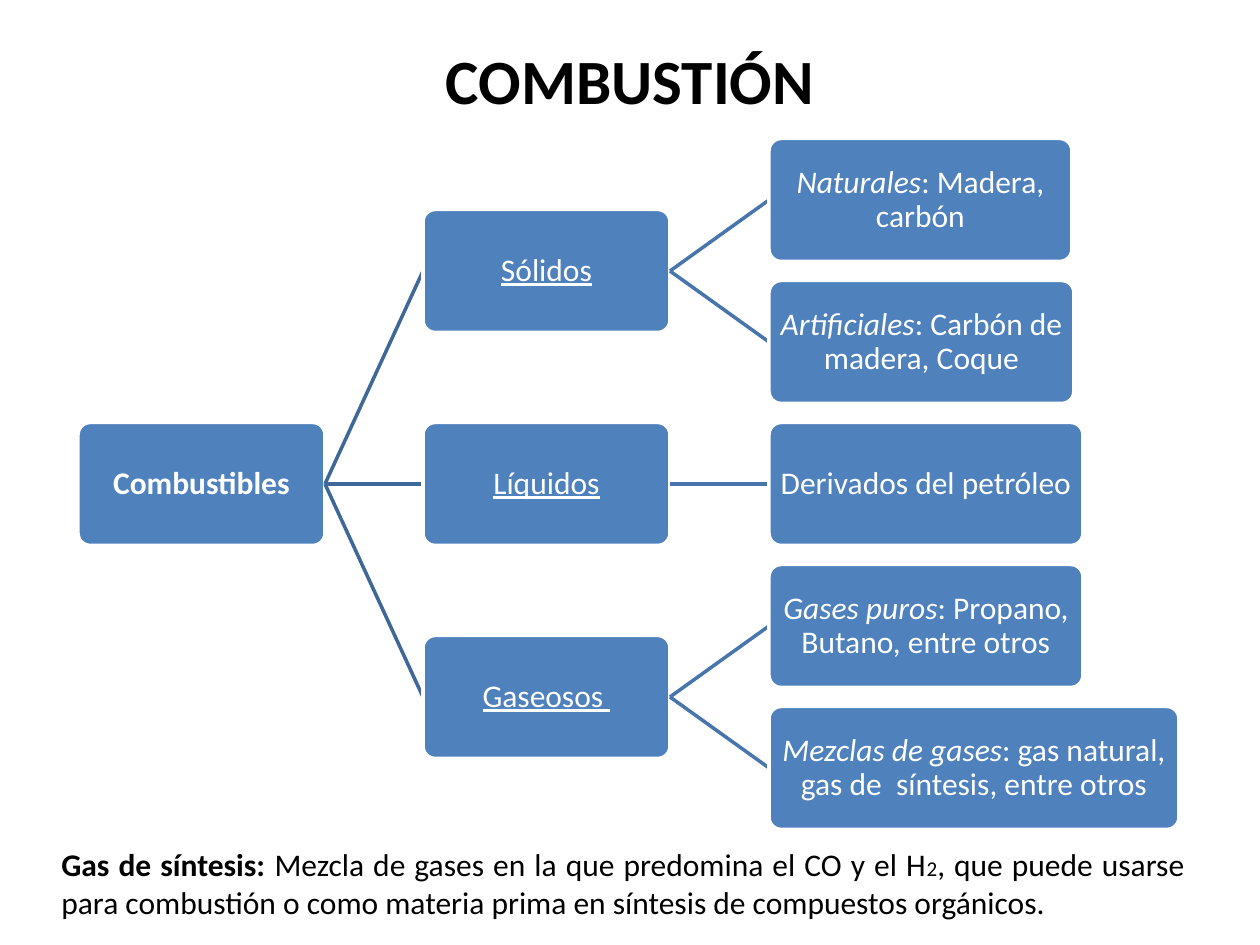
from dataclasses import dataclass

from lxml import etree
from pptx import Presentation
from pptx.dml.color import RGBColor
from pptx.enum.shapes import MSO_CONNECTOR, MSO_SHAPE
from pptx.enum.text import MSO_ANCHOR, PP_ALIGN
from pptx.oxml.ns import qn
from pptx.util import Pt

STRAIGHT = MSO_CONNECTOR.STRAIGHT
ROUNDED = MSO_SHAPE.ROUNDED_RECTANGLE
MIDDLE = MSO_ANCHOR.MIDDLE
CENTER, JUSTIFY = PP_ALIGN.CENTER, PP_ALIGN.JUSTIFY

EMU_PER_PX = 914400 / 126
SLIDE_SIZE = (1260, 945)
COLUMN_LEFTS = (78, 423, 769)
NODE_WIDTH, NODE_HEIGHT = 247, 123
FIRST_LEAF_CENTER, LEAF_PITCH = 200, 142


@dataclass(frozen=True)
class Theme:
    font: str = "Calibri"
    text: str = "000000"
    node_fill: str = "4F81BD"
    node_text: str = "FFFFFF"
    node_border: str = "FFFFFF"
    link_colors: tuple = ("3F6797", "4875AC")
    title_size: int = 36
    body_size: int = 18
    subscript_size: int = 12
    line_width: int = 2


@dataclass
class Node:
    runs: list
    width: int = NODE_WIDTH
    children: tuple = ()
    center: float = 0


def px(length):
    return round(length * EMU_PER_PX)


def rgb(color):
    return RGBColor.from_string(color)


def place_nodes(node, leaf_centers):
    for child in node.children:
        place_nodes(child, leaf_centers)
    if node.children:
        node.center = (node.children[0].center + node.children[-1].center) / 2
    else:
        node.center = next(leaf_centers)


class SlideBuilder:
    def __init__(self, slide, theme):
        self.slide = slide
        self.theme = theme

    def fill_text(self, frame, runs, size, color, alignment):
        frame.word_wrap = True
        paragraph = frame.paragraphs[0]
        paragraph.alignment = alignment
        paragraph.font.name = self.theme.font
        paragraph.font.size = Pt(size)
        paragraph.font.color.rgb = rgb(color)
        for text, style in runs:
            run = paragraph.add_run()
            run.text = text
            run.font.bold = style.get("bold")
            run.font.italic = style.get("italic")
            run.font.underline = style.get("underline")
            run.font.size = style.get("size")
        return paragraph

    def title(self, text, left, top, width, height):
        shape = self.slide.shapes.title
        shape.left, shape.top = px(left), px(top)
        shape.width, shape.height = px(width), px(height)
        shape.text_frame.vertical_anchor = MIDDLE
        self.fill_text(shape.text_frame, [(text, {"bold": True})],
                       self.theme.title_size, self.theme.text, CENTER)

    def note(self, runs, left, top, width, height):
        shape = self.slide.shapes.add_textbox(px(left), px(top), px(width), px(height))
        self.fill_text(shape.text_frame, runs, self.theme.body_size,
                       self.theme.text, JUSTIFY)

    def box(self, node, left):
        shape = self.slide.shapes.add_shape(
            ROUNDED, px(left), px(node.center - NODE_HEIGHT / 2),
            px(node.width), px(NODE_HEIGHT))
        shape.adjustments[0] = 0.1
        shape.shadow.inherit = False
        shape.fill.solid()
        shape.fill.fore_color.rgb = rgb(self.theme.node_fill)
        shape.line.color.rgb = rgb(self.theme.node_border)
        shape.line.width = Pt(self.theme.line_width)
        frame = shape.text_frame
        frame.vertical_anchor = MIDDLE
        frame.margin_left = frame.margin_right = px(1)
        frame.margin_top = frame.margin_bottom = px(1)
        paragraph = self.fill_text(frame, node.runs, self.theme.body_size,
                                   self.theme.node_text, CENTER)
        paragraph.line_spacing = 0.9

    def link(self, start, end, color):
        connector = self.slide.shapes.add_connector(
            STRAIGHT, *(px(value) for value in (*start, *end)))
        connector.line.color.rgb = rgb(color)
        connector.line.width = Pt(self.theme.line_width)
        etree.SubElement(connector._element.spPr, qn("a:effectLst"))

    def tree(self, node, level=0):
        left = COLUMN_LEFTS[level]
        self.box(node, left)
        for child in node.children:
            self.link((left + node.width, node.center),
                      (COLUMN_LEFTS[level + 1], child.center),
                      self.theme.link_colors[level])
            self.tree(child, level + 1)


def leaf(width, kind, examples):
    return Node([(kind, {"italic": True}), (examples, {})], width)


def branch(text, *children):
    return Node([(text, {"underline": True})], children=children)


def main():
    theme = Theme()
    presentation = Presentation()
    presentation.slide_width, presentation.slide_height = map(px, SLIDE_SIZE)
    slide = presentation.slides.add_slide(presentation.slide_layouts[5])
    builder = SlideBuilder(slide, theme)

    fuels = Node([("Combustibles", {"bold": True})], children=(
        branch("Sólidos",
               leaf(303, "Naturales", ": Madera, carbón"),
               leaf(305, "Artificiales", ": Carbón de madera, Coque")),
        branch("Líquidos", Node([("Derivados del petróleo", {})], 314)),
        branch("Gaseosos ",
               leaf(314, "Gases puros", ": Propano, Butano, entre otros"),
               leaf(410, "Mezclas de gases",
                    ": gas natural, gas de  síntesis, entre otros")),
    ))
    place_nodes(fuels, iter([FIRST_LEAF_CENTER + LEAF_PITCH * row for row in range(5)]))

    builder.title("COMBUSTIÓN", 63, 0, 1134, 158)
    builder.tree(fuels)
    builder.note([
        ("Gas de síntesis: ", {"bold": True}),
        ("Mezcla de gases en la que predomina el CO y el H", {}),
        ("2", {"size": Pt(theme.subscript_size)}),
        (", que puede usarse para combustión o como materia prima "
         "en síntesis de compuestos orgánicos.", {}),
    ], 49, 839, 1148, 89)
    presentation.save("out.pptx")


if __name__ == "__main__":
    main()
